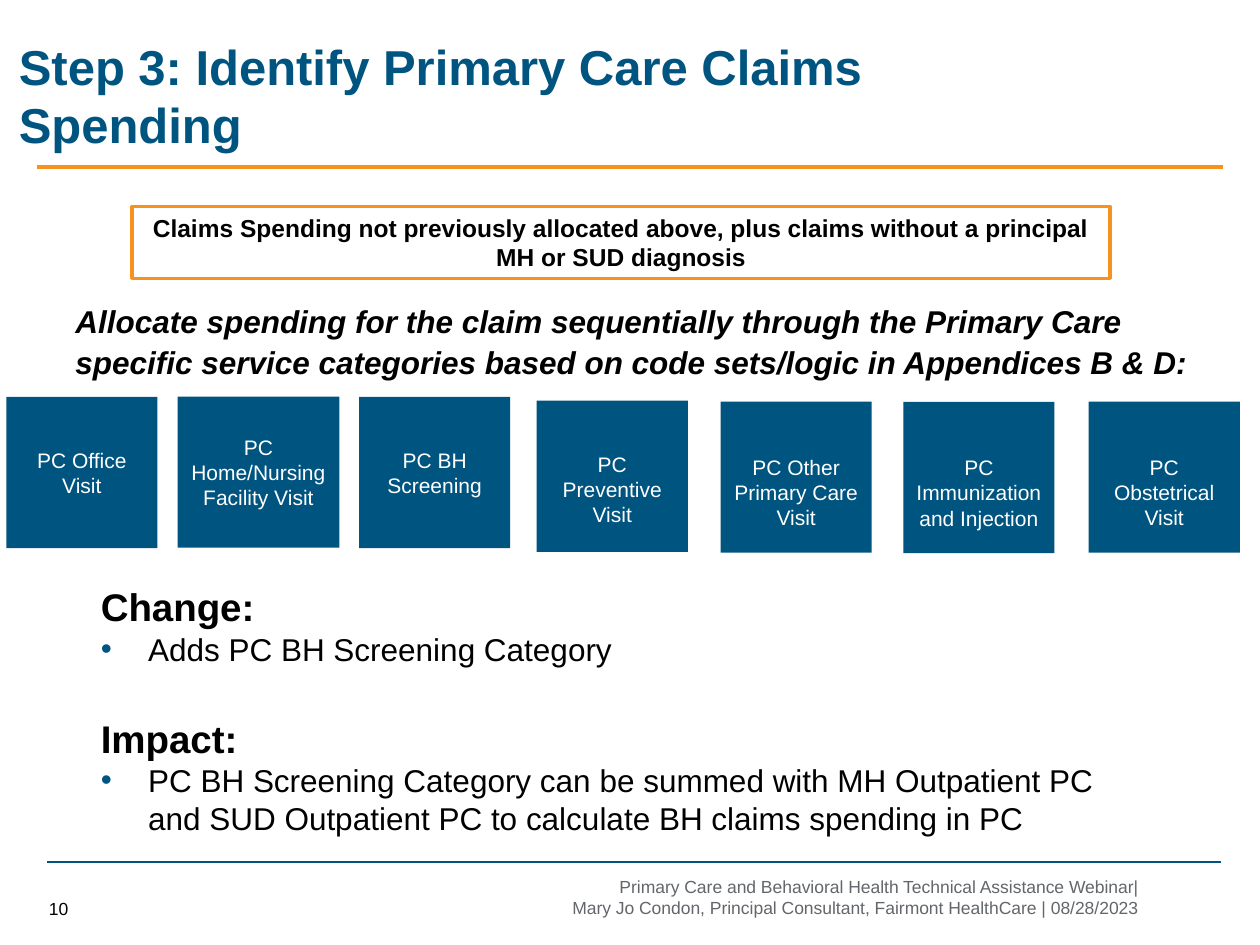
from lxml import etree
from pptx import Presentation
from pptx.dml.color import RGBColor
from pptx.enum.shapes import MSO_CONNECTOR, MSO_SHAPE
from pptx.enum.text import MSO_ANCHOR, MSO_AUTO_SIZE, PP_ALIGN
from pptx.oxml.ns import qn
from pptx.util import Pt

STRAIGHT = MSO_CONNECTOR.STRAIGHT
RECTANGLE = MSO_SHAPE.RECTANGLE
TOP, MIDDLE, BOTTOM = MSO_ANCHOR.TOP, MSO_ANCHOR.MIDDLE, MSO_ANCHOR.BOTTOM
NO_AUTOFIT = MSO_AUTO_SIZE.NONE
LEFT, CENTER, RIGHT = PP_ALIGN.LEFT, PP_ALIGN.CENTER, PP_ALIGN.RIGHT

BLUE, ORANGE, GREY, BLACK, WHITE = "005480", "F7921E", "63666A", "000000", "FFFFFF"
FONT = "Arial"
CATEGORY_SIZE = 86.4

CATEGORIES = [
    ("PC Office Visit", 3.6, 226.8, CATEGORY_SIZE, 0),
    ("PC\nHome/Nursing\nFacility Visit", 101.5, 226.6, 92.4, 0),
    ("PC BH Screening", 205.2, 226.8, CATEGORY_SIZE, 0),
    ("PC Preventive Visit", 306.7, 229, CATEGORY_SIZE, 14.5),
    ("PC Other Primary Care Visit", 411.8, 229.5, CATEGORY_SIZE, 17),
    ("PC Immunization and Injection", 516.2, 229.7, CATEGORY_SIZE, 17),
    ("PC Obstetrical\nVisit", 622.1, 229.5, CATEGORY_SIZE, 17),
]
FINDINGS = [
    ("Change:", "Adds PC BH Screening Category"),
    ("Impact:", "PC BH Screening Category can be summed with MH Outpatient PC "
                "and SUD Outpatient PC to calculate BH claims spending in PC"),
]


def color(value):
    return RGBColor.from_string(value)


def style(paragraph, size, ink=BLACK, bold=False, italic=False, align=LEFT):
    paragraph.alignment = align
    font = paragraph.font
    font.name, font.size, font.bold, font.italic = FONT, Pt(size), bold, italic
    font.color.rgb = color(ink)


def place(shape, left, top, width, height):
    shape.left, shape.top = Pt(left), Pt(top)
    shape.width, shape.height = Pt(width), Pt(height)


def write(shape, text, size, anchor=TOP, **look):
    frame = shape.text_frame
    frame.word_wrap = True
    frame.auto_size = NO_AUTOFIT
    frame.vertical_anchor = anchor
    frame.text = text
    for paragraph in frame.paragraphs:
        style(paragraph, size, **look)
    return frame


def add_text(slide, text, box, size, anchor=TOP, **look):
    textbox = slide.shapes.add_textbox(*map(Pt, box))
    return write(textbox, text, size, anchor, **look)


def add_box(slide, text, box, size, fill, border=None, anchor=TOP, **look):
    shape = slide.shapes.add_shape(RECTANGLE, *map(Pt, box))
    shape.shadow.inherit = False
    shape.fill.solid()
    shape.fill.fore_color.rgb = color(fill)
    if border:
        shape.line.color.rgb = color(border)
        shape.line.width = Pt(2)
    else:
        shape.line.fill.background()
    return write(shape, text, size, anchor, align=CENTER, **look)


def add_rule(slide, left, right, y, ink, weight):
    rule = slide.shapes.add_connector(STRAIGHT, Pt(left), Pt(y), Pt(right), Pt(y))
    rule.line.color.rgb = color(ink)
    rule.line.width = Pt(weight)
    etree.SubElement(rule._element.spPr, qn("a:effectLst"))


def set_bullet(paragraph, indent=0, mark=None):
    properties = paragraph._p.get_or_add_pPr()
    properties.set("marL", str(int(Pt(indent))))
    properties.set("indent", str(int(Pt(-indent))))
    if mark:
        bullet_color = etree.SubElement(properties, qn("a:buClr"))
        etree.SubElement(bullet_color, qn("a:srgbClr"), val=BLUE)
        etree.SubElement(properties, qn("a:buFont"), typeface=FONT)
        etree.SubElement(properties, qn("a:buChar"), char=mark)
    else:
        etree.SubElement(properties, qn("a:buNone"))


def fill_findings(body):
    place(body, 50.4, 329.8, 608.4, 152.6)
    frame = body.text_frame
    frame.word_wrap = True
    frame.auto_size = NO_AUTOFIT
    for position, (heading, detail) in enumerate(FINDINGS):
        label = frame.add_paragraph() if position else frame.paragraphs[0]
        label.text = heading
        set_bullet(label)
        label.space_before = Pt(27 if position else 0)
        style(label, 22, bold=True)
        item = frame.add_paragraph()
        item.text = detail
        set_bullet(item, 27, "•")
        item.space_before = Pt(0)
        style(item, 18)


def main():
    presentation = Presentation()
    presentation.slide_width, presentation.slide_height = Pt(720), Pt(540)
    slide = presentation.slides.add_slide(presentation.slide_layouts[1])

    title = slide.shapes.title
    place(title, 3.6, 16.6, 630, 74.9)
    write(title, "Step 3: Identify Primary Care Claims Spending", 28,
          BOTTOM, ink=BLUE, bold=True)
    add_rule(slide, 20.9, 699.1, 95.5, ORANGE, 2.25)

    add_box(slide, "Claims Spending not previously allocated above, plus claims "
            "without a principal MH or SUD diagnosis",
            (75.6, 118.1, 558.7, 41), 14, WHITE, border=ORANGE, bold=True)
    instruction = add_text(
        slide, "Allocate spending for the claim sequentially through the Primary Care "
        "specific service categories based on code sets/logic in Appendices B & D:",
        (36, 167.8, 661.7, 52.6), 18, bold=True, italic=True)
    instruction.paragraphs[0].line_spacing = 1.07

    for name, left, top, width, drop in CATEGORIES:
        category = add_box(slide, name, (left, top, width, CATEGORY_SIZE), 12, BLUE,
                           anchor=MIDDLE, ink=WHITE)
        category.margin_top = Pt(3.6 + drop)

    fill_findings(slide.placeholders[1])

    add_rule(slide, 26.6, 697.7, 492.5, BLUE, 0.75)
    add_text(slide, "10", (20.9, 504.7, 41.8, 28.8), 10, MIDDLE)
    add_text(slide, "Primary Care and Behavioral Health Technical Assistance Webinar|\n"
             "Mary Jo Condon, Principal Consultant, Fairmont HealthCare | 08/28/2023",
             (306.7, 498.2, 350.6, 28.8), 10, MIDDLE, ink=GREY, align=RIGHT)

    presentation.save("out.pptx")


if __name__ == "__main__":
    main()
